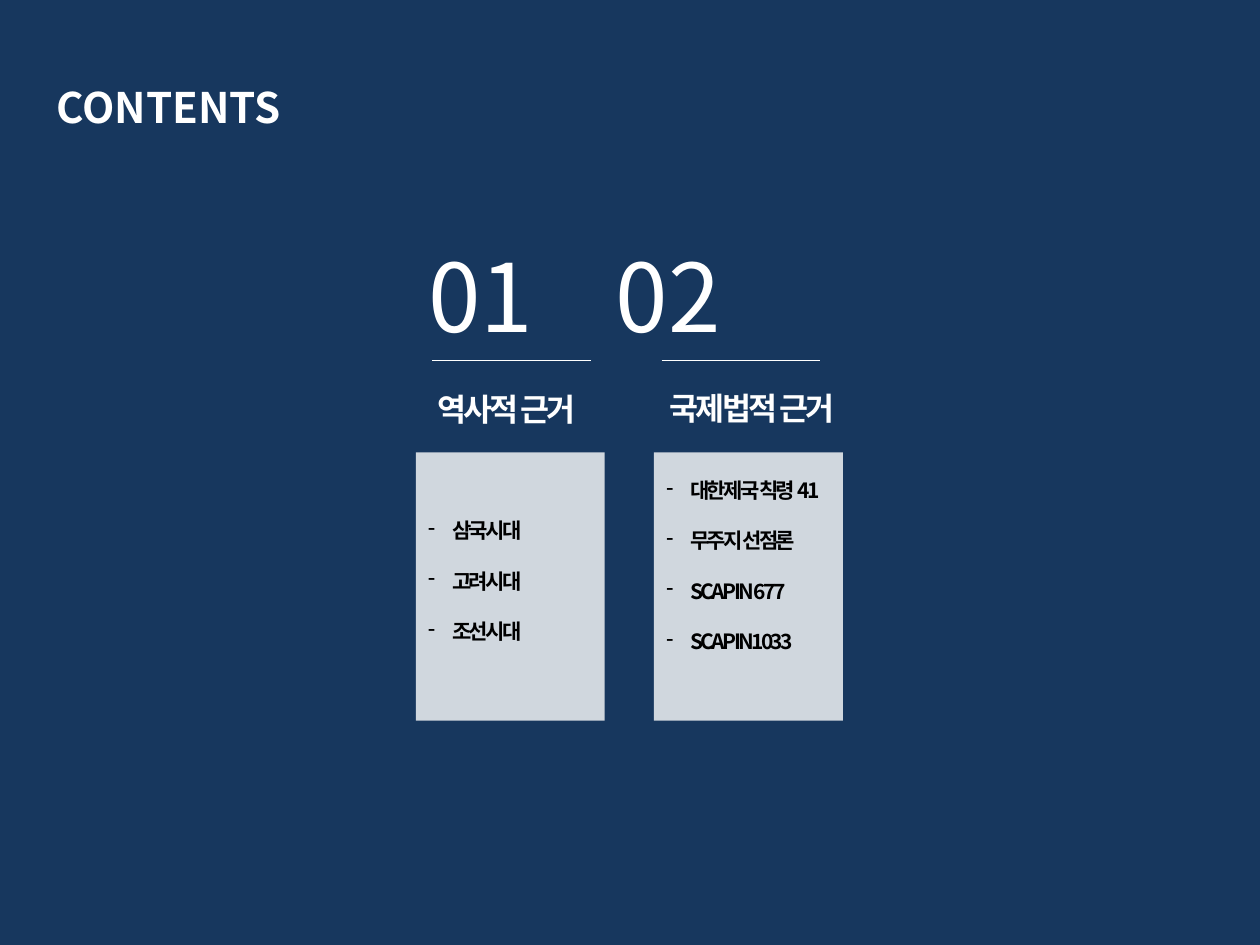
"""Build the contents slide with two numbered topics."""
from lxml import etree
from pptx import Presentation, util as u
from pptx.dml.color import RGBColor
from pptx.enum import shapes, text
from pptx.oxml import ns

FONT = "Noto Sans CJK KR"
NAVY, WHITE, BLACK = "17375E", "FFFFFF", "000000"


def paint(fill, color):
    fill.solid()
    fill.fore_color.rgb = RGBColor.from_string(color)


def child(node, tag, **attrs):
    return etree.SubElement(node, ns.qn(tag), attrs)


class Deck:
    def __init__(self, font):
        self.font = font
        self.prs = Presentation()
        self.prs.slide_width, self.prs.slide_height = u.Inches(10), u.Inches(7.5)
        self.slide = self.prs.slides.add_slide(self.prs.slide_layouts[6])
        paint(self.slide.background.fill, NAVY)

    def panel(self, *box):
        shape = self.slide.shapes.add_shape(
            shapes.MSO_SHAPE.RECTANGLE, *map(u.Inches, box))
        shape.shadow.inherit = False
        paint(shape.fill, WHITE)
        shape.line.fill.background()
        tint = shape.fill._xPr.find(".//" + ns.qn("a:srgbClr"))
        child(tint, "a:alpha", val="80000")

    def rule(self, left, top, width):
        ends = map(u.Inches, (left, top, left + width, top))
        line = self.slide.shapes.add_connector(shapes.MSO_CONNECTOR.STRAIGHT, *ends)
        paint(line.line.fill, WHITE)
        line.line.width = u.Pt(0.75)
        child(line._element.spPr, "a:effectLst")

    def label(self, box, lines, size, color=WHITE, bold=True, tight=False,
              center=False, dash=False):
        frame = self.slide.shapes.add_textbox(*map(u.Inches, box)).text_frame
        frame.word_wrap = True
        for i, line in enumerate(lines):
            para = frame.paragraphs[0] if i == 0 else frame.add_paragraph()
            run = para.add_run()
            run.text = line
            if center:
                para.alignment = text.PP_ALIGN.CENTER
            if dash:
                self.bullet(para, 1.2 * size if i else 0)
            font = para.font
            font.name, font.size, font.bold = self.font, u.Pt(size), bold
            paint(font.fill, color)
            child(font._element, "a:ea", typeface=self.font)
            if tight:
                run._r.get_or_add_rPr().set("spc", "-150")

    def bullet(self, para, gap):
        para.space_before = u.Pt(gap)
        props = para._p.get_or_add_pPr()
        props.set("marL", str(u.Inches(0.19)))
        props.set("indent", str(u.Inches(-0.19)))
        child(props, "a:buChar", char="-")

    def save(self):
        self.prs.save("out.pptx")


def main():
    deck = Deck(FONT)
    deck.label((0.35, 0.6, 4.57, 0.5), ["CONTENTS"], 24)
    topics = [
        ("01", 3.3, 3.43, 3.3, (3.27, 3.05, 1.5, 0.4), "역사적 근거",
         (3.3, 4.06, 1.5, 1.51), ["삼국시대", "고려시대", "조선시대"]),
        ("02", 4.79, 5.25, 5.19, (5.13, 3.04, 1.68, 0.4), "국제법적 근거",
         (5.19, 3.74, 1.62, 1.92),
         ["대한제국 칙령 41", "무주지 선점론", "SCAPIN 677", "SCAPIN1033"]),
    ]
    for num, left, start, edge, head, title, body, items in topics:
        deck.panel(edge, 3.59, 1.5, 2.13)
        deck.label((left, 1.84, 1.49, 1.01), [num], 54, bold=False)
        deck.rule(start, 2.86, 1.26)
        deck.label(head, [title], 18, tight=True, center=True)
        deck.label(body, items, 12, BLACK, tight=True, dash=True)
    deck.save()


if __name__ == "__main__":
    main()
